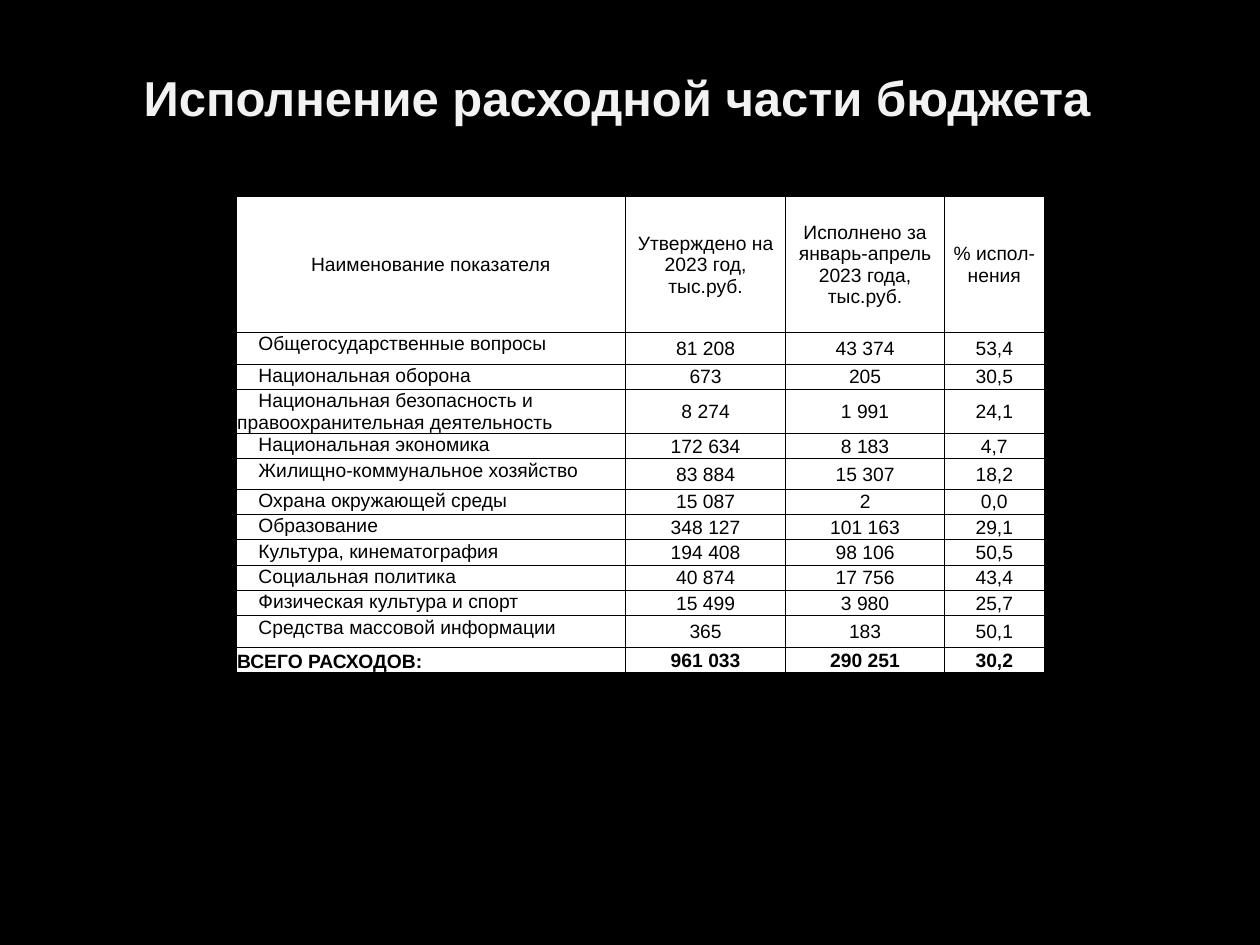
import pptx
import pptx.util
import pptx.dml.color
import pptx.enum.text
import pptx.oxml

Cm, Pt = pptx.util.Cm, pptx.util.Pt
ALIGN, ANCHOR = pptx.enum.text.PP_ALIGN, pptx.enum.text.MSO_ANCHOR
NS = "http://schemas.openxmlformats.org/drawingml/2006/main"


def color(hex_string):
    return pptx.dml.color.RGBColor.from_string(hex_string)


def write(tf, text, align, hex_string, fonts):
    p = tf.paragraphs[0]
    p.alignment = align
    r = p.add_run()
    r.text = text
    r.font.color.rgb = color(hex_string)
    for name, value in fonts.items():
        setattr(r.font, name, value)
    return p


prs = pptx.Presentation()
prs.slide_width, prs.slide_height = Cm(25.4), Cm(19.05)
s = prs.slides.add_slide(prs.slide_layouts[5])
s.background.fill.solid()
s.background.fill.fore_color.rgb = color("000000")

# Title, centred slightly left of the slide's middle
sp = s.shapes.title
box = {"left": Cm(1.27), "top": Cm(0.74), "width": Cm(22.86), "height": Cm(2.44)}
for name, value in box.items():
    setattr(sp, name, value)
tf = sp.text_frame
tf.vertical_anchor = ANCHOR.MIDDLE
tf.margin_right = Cm(0.78)
write(tf, "Исполнение расходной части бюджета", ALIGN.CENTER, "F2F2F2",
      {"name": "Arial", "size": Pt(28), "bold": True})

# Budget table
rows = [
    ("Наименование показателя", "Утверждено на 2023 год, тыс.руб.",
     "Исполнено за январь-апрель 2023 года, тыс.руб.", "% испол-нения"),
    ("Общегосударственные вопросы", "81 208", "43 374", "53,4"),
    ("Национальная оборона", "673", "205", "30,5"),
    ("Национальная безопасность и правоохранительная деятельность",
     "8 274", "1 991", "24,1"),
    ("Национальная экономика", "172 634", "8 183", "4,7"),
    ("Жилищно-коммунальное хозяйство", "83 884", "15 307", "18,2"),
    ("Охрана окружающей среды", "15 087", "2", "0,0"),
    ("Образование", "348 127", "101 163", "29,1"),
    ("Культура, кинематография", "194 408", "98 106", "50,5"),
    ("Социальная политика", "40 874", "17 756", "43,4"),
    ("Физическая культура и спорт", "15 499", "3 980", "25,7"),
    ("Средства массовой информации", "365", "183", "50,1"),
    ("ВСЕГО РАСХОДОВ:", "961 033", "290 251", "30,2"),
]
widths = [7.85, 3.23, 3.2, 2.01]
tall = {0: 2.74, 1: 0.64, 3: 0.89, 5: 0.61, 11: 0.64}
heights = [tall.get(i, 0.51) for i in range(len(rows))]
last = len(rows) - 1

table = s.shapes.add_table(len(rows), len(widths), Cm(4.76), Cm(3.96),
                           Cm(sum(widths)), Cm(sum(heights))).table
for col, width in zip(table.columns, widths):
    col.width = Cm(width)
for row, height in zip(table.rows, heights):
    row.height = Cm(height)

margins = {"margin_left": Cm(0.02), "margin_top": Cm(0.02),
           "margin_right": Cm(0.02), "margin_bottom": 0}
for i, row in enumerate(rows):
    for j, text in enumerate(row):
        cell = table.cell(i, j)
        for name, value in margins.items():
            setattr(cell, name, value)

        # Names sit left; the header and the figures are centred
        is_name = j == 0 and i > 0
        if not is_name:
            cell.vertical_anchor = ANCHOR.MIDDLE
        else:
            cell.vertical_anchor = ANCHOR.BOTTOM if i == last else ANCHOR.TOP
        p = write(cell.text_frame, text, ALIGN.LEFT if is_name else ALIGN.CENTER,
                  "000000", {"name": "Arial", "size": Pt(11), "bold": i == last})
        if is_name and i < last:
            p._p.get_or_add_pPr().set("indent", str(Cm(0.43)))

        # Borders come before the fill in the cell properties
        tcPr = cell._tc.get_or_add_tcPr()
        for side in ("lnL", "lnR", "lnT", "lnB"):
            tcPr.append(pptx.oxml.parse_xml(
                f'<a:{side} xmlns:a="{NS}" w="{Pt(0.5)}"><a:solidFill>'
                f'<a:srgbClr val="000000"/></a:solidFill></a:{side}>'))
        cell.fill.solid()
        cell.fill.fore_color.rgb = color("FFFFFF")

prs.save("out.pptx")
